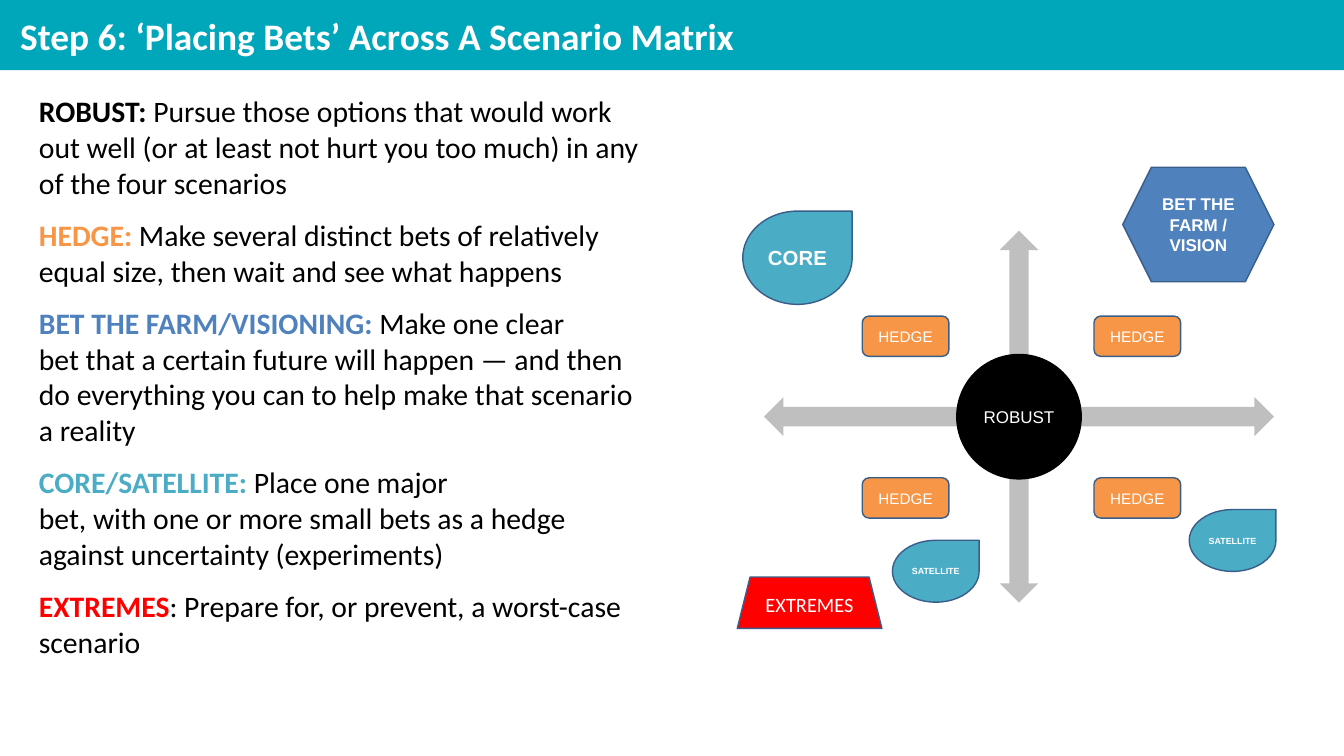
import pptx
import pptx.util
import pptx.dml.color
import pptx.enum.shapes
import pptx.enum.text
import pptx.oxml
from dataclasses import dataclass

Cm = pptx.util.Cm
Pt = pptx.util.Pt
Shape = pptx.enum.shapes.MSO_SHAPE
Align = pptx.enum.text.PP_ALIGN
Anchor = pptx.enum.text.MSO_ANCHOR


@dataclass(frozen=True)
class Theme:
    band: str = "00A6B9"
    white: str = "FFFFFF"
    black: str = "000000"
    hedge: str = "F79646"
    farm: str = "4F81BD"
    core: str = "4BACC6"
    extreme: str = "FF0000"
    axis: str = "BFBFBF"
    outline: str = "395E89"
    heading_font: str = "Calibri"
    label_font: str = "Arial"
    title_size: float = 53.4
    body_size: float = 42.4
    large_size: float = 29.1
    medium_size: float = 24.3
    hedge_size: float = 21.8
    small_size: float = 12.7
    line_width: float = 2
    paragraph_gap: float = 24


def color(value):
    return pptx.dml.color.RGBColor.from_string(value)


def apply(target, formats):
    for name, value in formats.items():
        setattr(target, name, value)


class MatrixPage:
    def __init__(self, deck, theme):
        self.theme = theme
        self.page = deck.slides.add_slide(deck.slide_layouts[1])

    def style_font(self, font, size, tint, name, bold=False):
        apply(font, {"size": Pt(size), "name": name, "bold": bold})
        font.color.rgb = color(tint)

    def place(self, box, left, top, width, height):
        apply(box, {"left": Cm(left), "top": Cm(top), "width": Cm(width), "height": Cm(height)})
        apply(box.text_frame, {
            "margin_left": 0, "margin_top": 0, "margin_right": 0, "margin_bottom": 0,
            "word_wrap": True, "vertical_anchor": Anchor.TOP,
            "auto_size": pptx.enum.text.MSO_AUTO_SIZE.NONE,
        })

    def title(self, text, *area):
        box = self.page.shapes.title
        self.place(box, *area)
        para = box.text_frame.paragraphs[0]
        para.alignment = Align.LEFT
        span = para.add_run()
        span.text = text
        self.style_font(span.font, self.theme.title_size, self.theme.white,
                        self.theme.heading_font, True)

    def definitions(self, entries, *area):
        box = self.page.placeholders[1]
        self.place(box, *area)
        for index, (term, tint, meaning) in enumerate(entries):
            para = box.text_frame.paragraphs[0] if index == 0 else box.text_frame.add_paragraph()
            properties = para._p.get_or_add_pPr()
            apply(para, {"alignment": Align.LEFT,
                         "space_before": Pt(self.theme.paragraph_gap if index else 0)})
            properties.set("marL", "0")
            properties.set("indent", "0")
            properties.append(pptx.oxml.parse_xml(
                '<a:buNone xmlns:a="http://schemas.openxmlformats.org/drawingml/2006/main"/>'))
            self.span(para, term, tint, True)
            for line, part in enumerate(meaning.split("\n")):
                if line:
                    para.add_line_break()
                self.span(para, part, self.theme.black, False)

    def span(self, para, text, tint, bold):
        span = para.add_run()
        span.text = text
        self.style_font(span.font, self.theme.body_size, tint, self.theme.heading_font, bold)

    def shape(self, kind, fill, left, top, width, height, outline=None):
        shape = self.page.shapes.add_shape(kind, Cm(left), Cm(top), Cm(width), Cm(height))
        shape.shadow.inherit = False
        shape.fill.solid()
        shape.fill.fore_color.rgb = color(fill)
        if outline:
            shape.line.color.rgb = color(outline)
            shape.line.width = Pt(self.theme.line_width)
        else:
            shape.line.fill.background()
        return shape

    def band(self, *area):
        band = self.shape(Shape.RECTANGLE, self.theme.band, *area)
        self.page.shapes.title.element.addprevious(band.element)

    def axis(self, center_x, center_y, length, thickness, rotation):
        arrow = self.shape(Shape.LEFT_RIGHT_ARROW, self.theme.axis, center_x - length / 2,
                           center_y - thickness / 2, length, thickness)
        arrow.rotation = rotation

    def bet(self, kind, text, fill, area, size, bold=False, font=None, outline=None,
            margins=(0.25, 0.13)):
        shape = self.shape(kind, fill, *area, outline or self.theme.outline)
        side, edge = map(Cm, margins)
        apply(shape.text_frame, {
            "margin_left": side, "margin_right": side, "margin_top": edge, "margin_bottom": edge,
            "word_wrap": True, "vertical_anchor": Anchor.MIDDLE,
        })
        para = shape.text_frame.paragraphs[0]
        para.alignment = Align.CENTER
        span = para.add_run()
        span.text = text
        self.style_font(span.font, size, self.theme.white, font or self.theme.label_font, bold)


def main():
    deck = pptx.Presentation()
    apply(deck, {"slide_width": Cm(67.74), "slide_height": Cm(38.1)})
    theme = Theme()
    matrix = MatrixPage(deck, theme)

    matrix.band(0, 0, 67.74, 3.53)
    matrix.title("Step 6: ‘Placing Bets’ Across A Scenario Matrix", 1.02, 0.66, 62.41, 2.29)
    matrix.definitions([
        ("ROBUST: ", theme.black, "Pursue those options that would work out well "
         "(or at least not hurt you too much) in any of the four scenarios"),
        ("HEDGE: ", theme.hedge, "Make several distinct bets of relatively equal size, "
         "then wait and see what happens"),
        ("BET THE FARM/VISIONING: ", theme.farm, "Make one clear \nbet that a certain future "
         "will happen — and then do everything you can to help make that scenario a reality"),
        ("CORE/SATELLITE: ", theme.core, "Place one major \nbet, with one or more small bets "
         "as a hedge against uncertainty (experiments)"),
        ("EXTREMES", theme.extreme, ": Prepare for, or prevent, a worst-case scenario"),
    ], 1.96, 4.7, 30.94, 33.07)

    matrix.bet(Shape.TRAPEZOID, "EXTREMES", theme.extreme, (37.16, 29.08, 7.29, 2.59),
               theme.large_size, font=theme.heading_font, margins=(0.3, 0.15))

    center_x, center_y, diameter = 51.36, 21, 6.27
    for length, rotation in ((25.7, 0), (18.75, 90)):
        matrix.axis(center_x, center_y, length, 1.96, rotation)
    matrix.bet(Shape.OVAL, "ROBUST", theme.black,
               (center_x - diameter / 2, center_y - diameter / 2, diameter, diameter),
               theme.medium_size, outline=theme.black)

    for left in (43.46, 55.14):
        for top in (15.93, 24.08):
            matrix.bet(Shape.ROUNDED_RECTANGLE, "HEDGE", theme.hedge, (left, top, 4.37, 2.03),
                       theme.hedge_size)

    matrix.bet(Shape.HEXAGON, "BET THE FARM / VISION", theme.farm, (56.59, 8.43, 7.62, 5.77),
               theme.medium_size, bold=True)
    matrix.bet(Shape.TEAR, "CORE", theme.core, (37.44, 10.64, 5.51, 4.7),
               theme.large_size, bold=True)
    for left, top in ((44.98, 27.23), (59.94, 25.68)):
        matrix.bet(Shape.TEAR, "SATELLITE", theme.core, (left, top, 4.37, 3.12),
                   theme.small_size, bold=True)

    deck.save("out.pptx")


if __name__ == "__main__":
    main()
